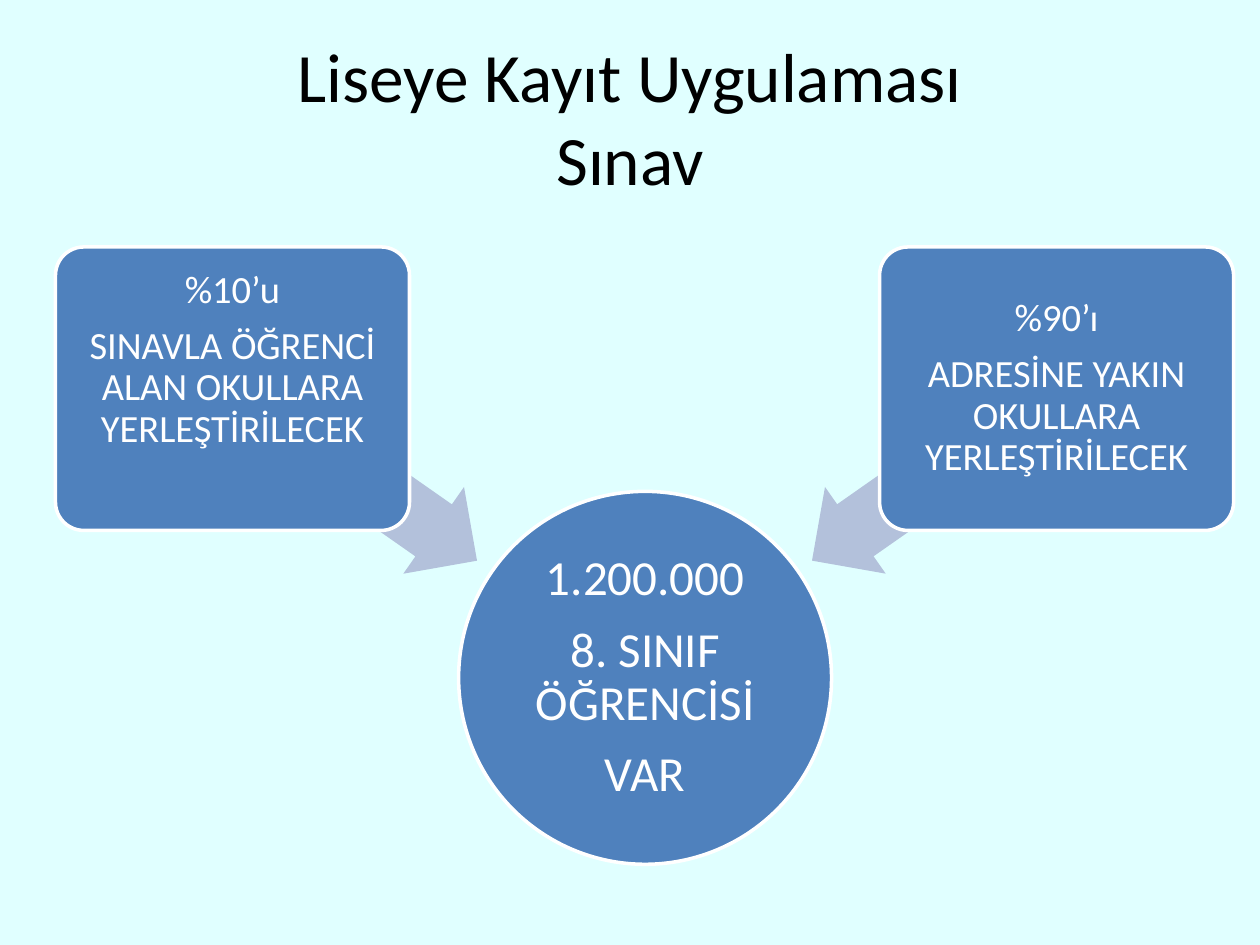
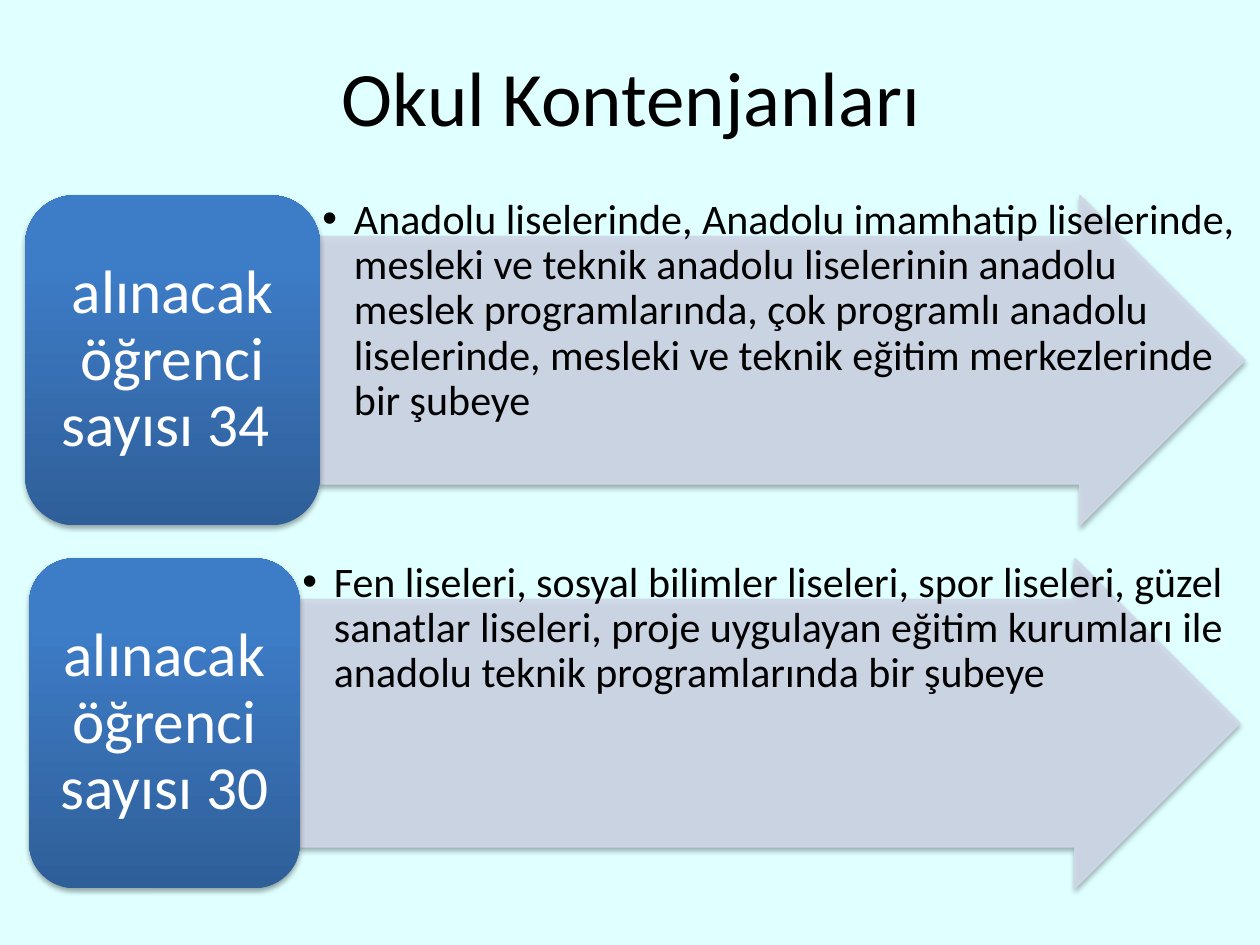
from dataclasses import dataclass

from lxml import etree
from pptx import Presentation
from pptx.dml.color import RGBColor
from pptx.enum.shapes import MSO_SHAPE
from pptx.enum.text import MSO_ANCHOR, MSO_AUTO_SIZE, PP_ALIGN
from pptx.oxml.ns import qn
from pptx.util import Pt

ELLIPSE = MSO_SHAPE.OVAL
ROUNDED = MSO_SHAPE.ROUNDED_RECTANGLE
LEFT_ARROW = MSO_SHAPE.LEFT_ARROW
RIGHT_ARROW = MSO_SHAPE.RIGHT_ARROW
CENTER, LEFT = PP_ALIGN.CENTER, PP_ALIGN.LEFT
MIDDLE, TOP = MSO_ANCHOR.MIDDLE, MSO_ANCHOR.TOP
NO_AUTOFIT = MSO_AUTO_SIZE.NONE

FONT = "Calibri"
COLORS = {
    "background": "E0FFFF",
    "text": "000000",
    "white": "FFFFFF",
    "blue": "4F81BD",
    "link": "B3C1DB",
    "band": "D0D8E8",
    "dark": "2F5F99",
    "light": "3D7CC7",
}
TITLE_ONLY, TWO_CONTENT = 5, 3


@dataclass(frozen=True)
class Box:
    left: float
    top: float
    width: float
    height: float

    def lengths(self) -> tuple:
        return Pt(self.left), Pt(self.top), Pt(self.width), Pt(self.height)


@dataclass(frozen=True)
class ShareCard:
    """A share of the students and the arrow that leads from it."""
    text: str
    left: float
    arrow_left: float
    arrow_angle: float
    bottom_inset: float


@dataclass(frozen=True)
class QuotaRow:
    label: str
    schools: str
    left: float
    label_width: float
    arrow_width: float


SHARE_CARDS = [
    ShareCard("%10’u\nSINAVLA ÖĞRENCİ ALAN OKULLARA YERLEŞTİRİLECEK",
              31.7, 117.4, 215, 36),
    ShareCard("%90’ı\nADRESİNE YAKIN OKULLARA YERLEŞTİRİLECEK",
              502.6, 448.6, 325, 3.6),
]
QUOTA_ROWS = [
    QuotaRow("alınacak öğrenci sayısı 34 ",
             "Anadolu liselerinde, Anadolu imamhatip liselerinde, mesleki ve "
             "teknik anadolu liselerinin anadolu meslek programlarında, çok "
             "programlı anadolu liselerinde, mesleki ve teknik eğitim "
             "merkezlerinde bir şubeye", 14.4, 168.5, 528.5),
    QuotaRow("alınacak öğrenci sayısı 30",
             "Fen liseleri, sosyal bilimler liseleri, spor liseleri, güzel "
             "sanatlar liseleri, proje uygulayan eğitim kurumları ile anadolu "
             "teknik programlarında bir şubeye", 16.6, 154.8, 537.1),
]
ROW_TOP, ROW_HEIGHT, ROW_PITCH = 111.6, 188.6, 207.4


def rgb(name: str) -> RGBColor:
    return RGBColor.from_string(COLORS[name])


def place(shape, box: Box) -> None:
    shape.left, shape.top, shape.width, shape.height = box.lengths()


def set_text(shape, text: str, size: float, color: str, insets: tuple,
             align=CENTER, anchor=MIDDLE, spacing: float = 0.9,
             space_after: float = 0.38) -> None:
    """Fill a shape with text; space_after is a share of the font size."""
    frame = shape.text_frame
    frame.text = text
    frame.word_wrap = True
    frame.auto_size = NO_AUTOFIT
    frame.vertical_anchor = anchor
    (frame.margin_left, frame.margin_top,
     frame.margin_right, frame.margin_bottom) = map(Pt, insets)
    for paragraph in frame.paragraphs:
        paragraph.alignment = align
        paragraph.line_spacing = spacing
        paragraph.space_before = Pt(0)
        paragraph.space_after = Pt(round(size * space_after, 1))
        for run in paragraph.runs:
            run.font.name = FONT
            run.font.size = Pt(size)
            run.font.color.rgb = rgb(color)


def add_filled(slide, kind, box: Box, fill: str, line: str = "",
               line_width: float = 0, adjustments: tuple = ()):
    shape = slide.shapes.add_shape(kind, *box.lengths())
    shape.shadow.inherit = False
    for index, value in enumerate(adjustments):
        shape.adjustments[index] = value
    shape.fill.solid()
    shape.fill.fore_color.rgb = rgb(fill)
    if line:
        shape.line.color.rgb = rgb(line)
        shape.line.width = Pt(line_width)
    else:
        shape.line.fill.background()
    return shape


def add_alpha(color_element, percent: int) -> None:
    etree.SubElement(color_element, qn("a:alpha")).set("val", str(percent * 1000))


def add_soft_shadow(shape) -> None:
    effects = shape.element.spPr.find(qn("a:effectLst"))
    shadow = etree.SubElement(effects, qn("a:outerShdw"), blurRad=str(Pt(3.1)),
                              dist=str(Pt(1.8)), dir="5400000", rotWithShape="0")
    add_alpha(etree.SubElement(shadow, qn("a:srgbClr"), val=COLORS["text"]), 35)


def add_titled_slide(presentation, layout: int, title: str, size: float, box: Box):
    slide = presentation.slides.add_slide(presentation.slide_layouts[layout])
    slide.background.fill.solid()
    slide.background.fill.fore_color.rgb = rgb("background")
    place(slide.shapes.title, box)
    set_text(slide.shapes.title, title, size, "text", (7.2, 3.6, 7.2, 3.6),
             spacing=1.0, space_after=0)
    return slide


def add_share_card(slide, card: ShareCard) -> None:
    arrow = add_filled(slide, LEFT_ARROW, Box(card.arrow_left, 241.2, 170.6, 60.5),
                       "link", adjustments=(0.6, 0.5))
    arrow.rotation = card.arrow_angle
    shape = add_filled(slide, ROUNDED, Box(card.left, 141.1, 202.3, 162),
                       "blue", "white", 2, (0.1,))
    set_text(shape, card.text, 22, "white", (3.6, 3.6, 3.6, card.bottom_inset))


def add_quota_row(slide, row: QuotaRow, top: float, schools) -> None:
    # Arrow band
    arrow_box = Box(row.left + row.label_width, top, row.arrow_width, ROW_HEIGHT)
    arrow = add_filled(slide, RIGHT_ARROW, arrow_box, "band", "band", 0.75,
                       (0.75, 0.5))
    for color_element in list(arrow.element.spPr.iter(qn("a:srgbClr"))):
        add_alpha(color_element, 90)
    add_soft_shadow(arrow)

    # School list, brought in front of the arrow
    place(schools, arrow_box)
    set_text(schools, row.schools, 24, "text", (1.4, 1.4, 1.4, 1.4),
             LEFT, TOP, space_after=0.15)
    properties = schools.text_frame.paragraphs[0]._p.get_or_add_pPr()
    properties.set("marL", str(Pt(18)))
    properties.set("indent", str(Pt(-18)))
    schools.element.getparent().append(schools.element)

    # Student number
    label = add_filled(slide, ROUNDED,
                       Box(row.left, top, row.label_width, ROW_HEIGHT), "light")
    label.fill.gradient()
    label.fill.gradient_angle = 90
    for stop, color, position in zip(label.fill.gradient_stops,
                                     ("dark", "light"), (0, 0.8)):
        stop.color.rgb = rgb(color)
        stop.position = position
    add_soft_shadow(label)
    set_text(label, row.label, 35, "white", (3, 3, 3, 3))


def build_exam_slide(presentation) -> None:
    slide = add_titled_slide(presentation, TITLE_ONLY,
                             "Liseye Kayıt Uygulaması\vSınav", 39.6,
                             Box(36, 21.6, 648, 90))
    students = add_filled(slide, ELLIPSE, Box(262.1, 280.8, 213.1, 213.1),
                          "blue", "white", 2)
    set_text(students, "1.200.000\n8. SINIF ÖĞRENCİSİ\nVAR", 28, "white",
             (1.4, 1.4, 1.4, 1.4))
    for card in SHARE_CARDS:
        add_share_card(slide, card)


def build_quota_slide(presentation) -> None:
    slide = add_titled_slide(presentation, TWO_CONTENT, "Okul Kontenjanları", 44,
                             Box(36.7, 9.4, 648, 90))
    bodies = list(slide.placeholders)[1:]
    for index, (row, body) in enumerate(zip(QUOTA_ROWS, bodies)):
        add_quota_row(slide, row, ROW_TOP + index * ROW_PITCH, body)


def main() -> None:
    presentation = Presentation()
    presentation.slide_width, presentation.slide_height = Pt(720), Pt(540)
    build_exam_slide(presentation)
    build_quota_slide(presentation)
    presentation.save("out.pptx")


if __name__ == "__main__":
    main()
